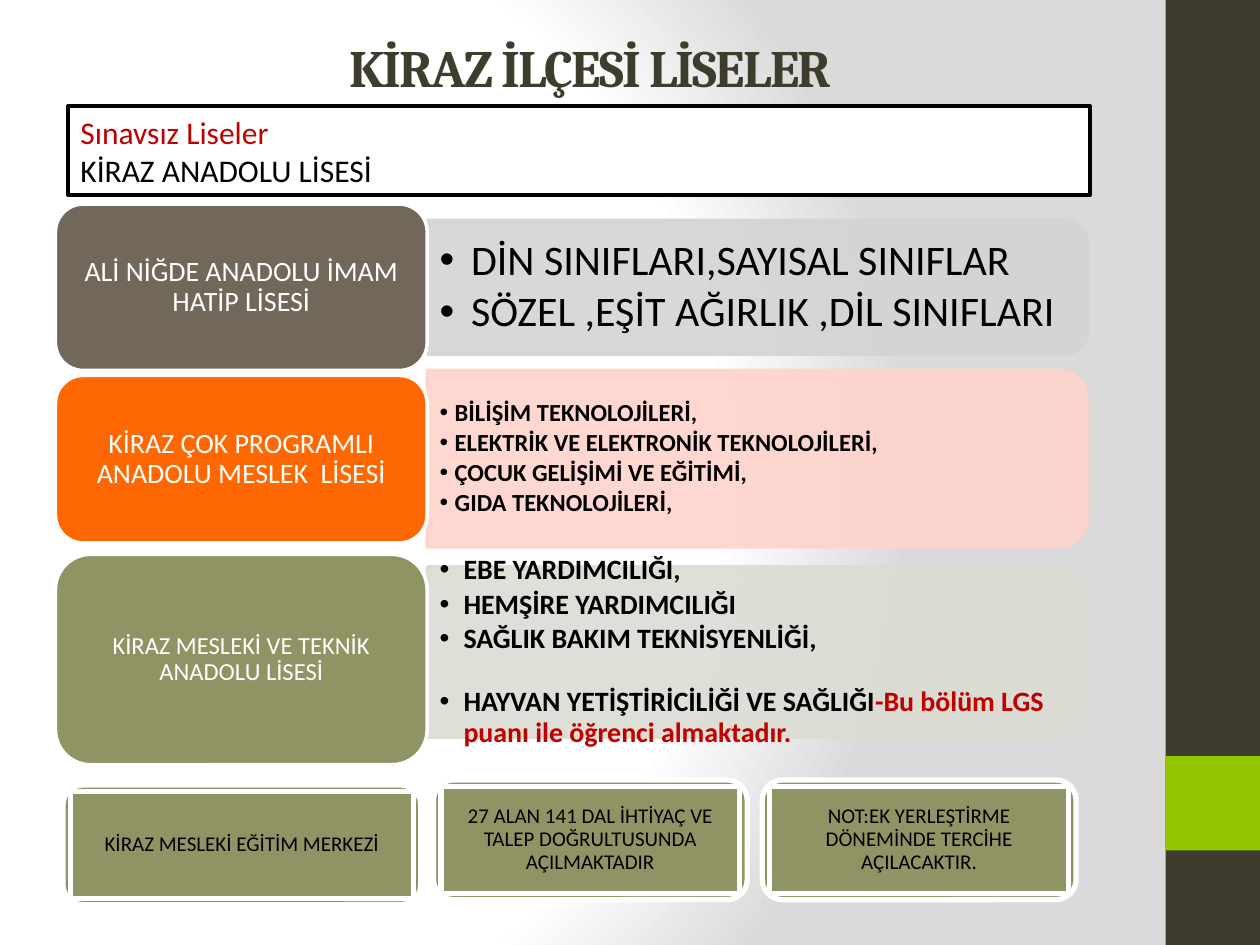
import pptx
import pptx.util
import pptx.dml.color
import pptx.enum.shapes
import pptx.enum.text
import pptx.oxml
import pptx.oxml.ns
from pptx.util import Inches

SHAPES = pptx.enum.shapes.MSO_SHAPE
ALIGN = pptx.enum.text.PP_ALIGN
MIDDLE = pptx.enum.text.MSO_ANCHOR.MIDDLE
NS = pptx.oxml.ns.nsdecls("a", "p")
color = pptx.dml.color.RGBColor.from_string

deck = pptx.Presentation()
deck.slide_width, deck.slide_height = Inches(10), Inches(7.5)
slide = deck.slides.add_slide(deck.slide_layouts[5])


def add_box(kind, left, top, width, height, fill, line=None, line_width=2):
    shape = slide.shapes.add_shape(
        kind, Inches(left), Inches(top), Inches(width), Inches(height))
    shape.shadow.inherit = False
    shape.fill.solid()
    shape.fill.fore_color.rgb = color(fill)
    if line:
        shape.line.color.rgb = color(line)
        shape.line.width = pptx.util.Pt(line_width)
    else:
        shape.line.fill.background()
    return shape


def write(shape, paragraphs, size, inset=(0.1, 0.05), align=ALIGN.LEFT,
          spacing=0.9, after=0, bold=False, font="Calibri"):
    """Fill a shape with paragraphs, each a list of (text, colour) runs."""
    frame = shape.text_frame
    frame.word_wrap = True
    frame.auto_size = pptx.enum.text.MSO_AUTO_SIZE.NONE
    frame.vertical_anchor = MIDDLE
    frame.margin_left = frame.margin_right = Inches(inset[0])
    frame.margin_top = frame.margin_bottom = Inches(inset[1])
    for i, runs in enumerate(paragraphs):
        paragraph = frame.paragraphs[0] if i == 0 else frame.add_paragraph()
        paragraph.alignment = align
        paragraph.line_spacing = spacing
        paragraph.space_before = pptx.util.Pt(0)
        paragraph.space_after = pptx.util.Pt(after)
        for text, ink in runs:
            run = paragraph.add_run()
            run.text = text
            run.font.name = font
            run.font.size = pptx.util.Pt(size)
            run.font.bold = bold
            run.font.color.rgb = color(ink)
    return frame


# Background glow and side band
stops = "".join(
    f'<a:gs pos="{pos}"><a:srgbClr val="{tint}"/></a:gs>'
    for pos, tint in [(0, "FFFFFF"), (75000, "FFFFFF"), (100000, "DADADA")])
slide.element.cSld.insert(0, pptx.oxml.parse_xml(
    f'<p:bg {NS}><p:bgPr><a:gradFill rotWithShape="1"><a:gsLst>{stops}</a:gsLst>'
    '<a:path path="circle"><a:fillToRect l="20000" t="50000" r="100000" b="50000"/>'
    '</a:path></a:gradFill><a:effectLst/></p:bgPr></p:bg>'))
add_box(SHAPES.RECTANGLE, 9.25, 0, 0.75, 7.5, "3E3D2D")
add_box(SHAPES.RECTANGLE, 9.25, 6, 0.75, 0.75, "94C600")

# Title and schools without an exam
title = slide.shapes.title
title.left, title.top = Inches(0.52), Inches(0.14)
title.width, title.height = Inches(8.33), Inches(0.77)
heading = write(title, [[("KİRAZ İLÇESİ LİSELER", "3E3D2D")]], 30,
                align=ALIGN.CENTER, spacing=1.0, bold=True, font="Cambria")
heading.paragraphs[0].runs[0].font._element.set("spc", "-100")

no_exam = add_box(SHAPES.RECTANGLE, 0.54, 0.84, 8.11, 0.71, "FFFFFF", "000000")
write(no_exam, [[("Sınavsız Liseler", "C00000")],
                [("KİRAZ ANADOLU LİSESİ", "000000")]], 18, spacing=1.0)

# School rows: name, name size, colour, top, height,
# then panel colour, top, height, text size, hanging indent, branches
BLACK, RED = "000000", "C00000"
schools = [
    ("ALİ NİĞDE ANADOLU İMAM HATİP LİSESİ", 16, "71685A", 1.62, 1.32,
     "D5D4D2", 1.75, 1.06, 24, 0.25,
     [[("DİN SINIFLARI,SAYISAL SINIFLAR", BLACK)],
      [("SÖZEL ,EŞİT AĞIRLIK ,DİL SINIFLARI", BLACK)]]),
    ("KİRAZ ÇOK PROGRAMLI ANADOLU MESLEK  LİSESİ", 16, "FF6700", 2.98, 1.33,
     "FFD3CC", 2.94, 1.4, 14, 0.12,
     [[("BİLİŞİM TEKNOLOJİLERİ,", BLACK)],
      [("ELEKTRİK VE ELEKTRONİK TEKNOLOJİLERİ,", BLACK)],
      [("ÇOCUK GELİŞİMİ VE EĞİTİMİ,", BLACK)],
      [("GIDA TEKNOLOJİLERİ,", BLACK)]]),
    ("KİRAZ MESLEKİ VE TEKNİK ANADOLU LİSESİ", 14, "909465", 4.4, 1.67,
     "DBDCD3", 4.5, 1.35, 16, 0.19,
     [[("EBE YARDIMCILIĞI,", BLACK)],
      [("HEMŞİRE YARDIMCILIĞI", BLACK)],
      [("SAĞLIK BAKIM TEKNİSYENLİĞİ,", BLACK)],
      [("HAYVAN YETİŞTİRİCİLİĞİ VE SAĞLIĞI", BLACK),
       ("-Bu bölüm LGS puanı ile öğrenci almaktadır.", RED)]]),
]
panel_left, panel_width = 3.39, 5.24
for (school, name_size, fill, top, height, tint, panel_top, panel_height,
     size, indent, branches) in schools:
    # A quarter turn puts the rounded corners on the right-hand side
    panel = add_box(SHAPES.ROUND_2_SAME_RECTANGLE,
                    panel_left + (panel_width - panel_height) / 2,
                    panel_top + (panel_height - panel_width) / 2,
                    panel_height, panel_width, tint, tint)
    panel.rotation = 90
    for paint in panel._element.spPr.iter(pptx.oxml.ns.qn("a:srgbClr")):
        paint.append(pptx.oxml.parse_xml(f'<a:alpha {NS} val="90000"/>'))

    branch_text = slide.shapes.add_textbox(
        Inches(panel_left), Inches(panel_top + 0.06),
        Inches(5.19), Inches(panel_height - 0.12))
    frame = write(branch_text, branches, size, after=0.15 * size, bold=size < 24)
    for paragraph in frame.paragraphs:
        props = paragraph._p.get_or_add_pPr()
        props.set("marL", str(Inches(indent)))
        props.set("indent", str(-Inches(indent)))
        props.append(pptx.oxml.parse_xml(f'<a:buFont {NS} typeface="Arial"/>'))
        props.append(pptx.oxml.parse_xml(f'<a:buChar {NS} char="•"/>'))
    if len(branches[-1]) > 1:
        frame.paragraphs[-1].space_before = pptx.util.Pt(16.5)

    label = add_box(SHAPES.ROUNDED_RECTANGLE, 0.44, top, 2.95, height, fill, "FFFFFF")
    write(label, [[(school, "FFFFFF")]], name_size, (0.14, 0.1), ALIGN.CENTER)

# Bottom row: a rounded frame with a rectangle inside
notes = [
    ("KİRAZ MESLEKİ EĞİTİM MERKEZİ", 0.5, 6.23, 2.84),
    ("27 ALAN 141 DAL İHTİYAÇ VE TALEP DOĞRULTUSUNDA AÇILMAKTADIR", 3.44, 6.19, 2.49),
    ("NOT:EK YERLEŞTİRME DÖNEMİNDE TERCİHE AÇILACAKTIR.", 6.05, 6.19, 2.49),
]
for note, left, top, width in notes:
    add_box(SHAPES.ROUNDED_RECTANGLE, left, top, width, 0.95, "909465", "FFFFFF", 3)
    plate = add_box(SHAPES.RECTANGLE, left + 0.06, top + 0.05, width - 0.12, 0.85,
                    "909465", "FFFFFF", 3)
    write(plate, [[(note, BLACK)]], 12, (0.07, 0.07), ALIGN.CENTER)

deck.save("out.pptx")
